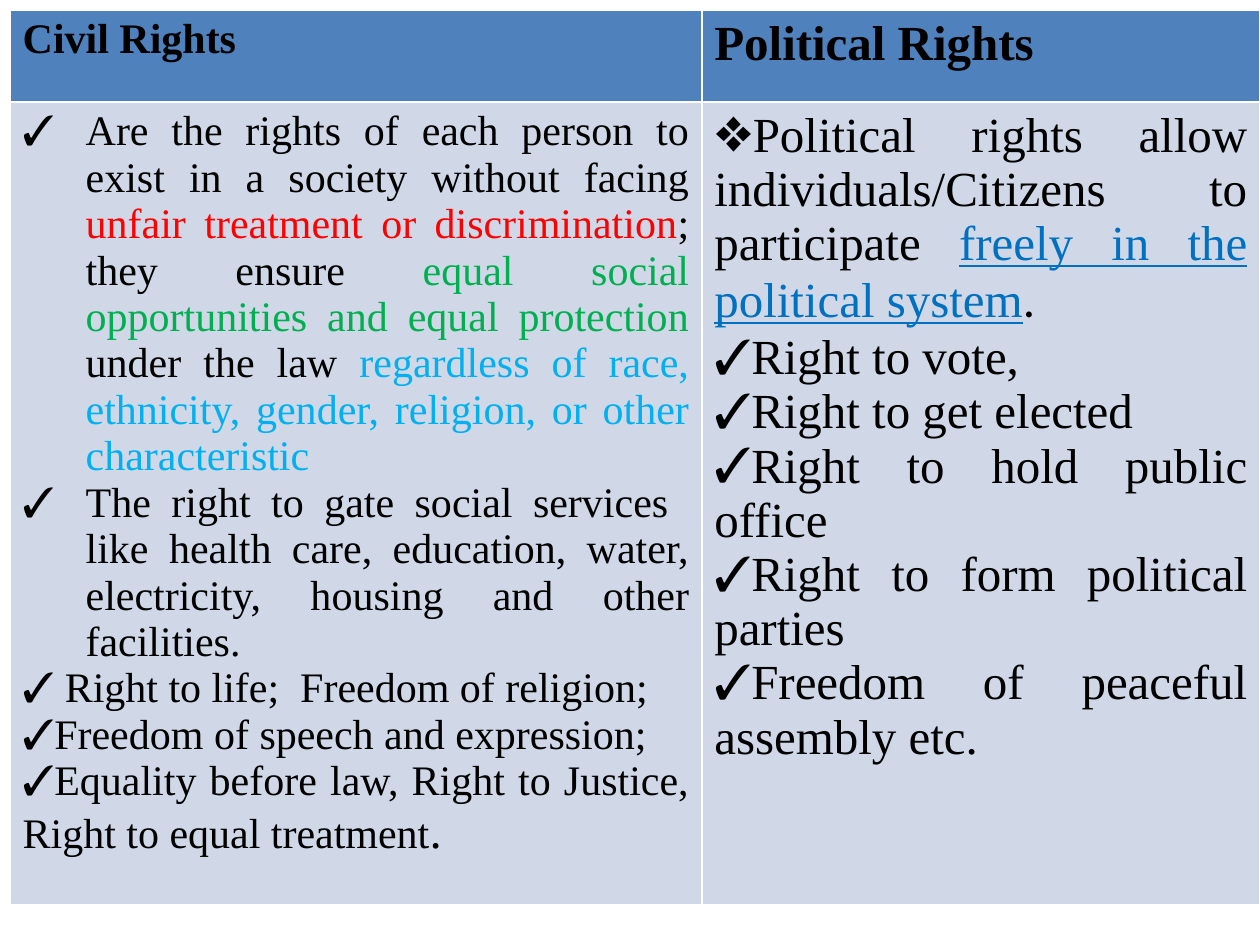
from lxml.etree import SubElement
from pptx import Presentation
from pptx.dml.color import RGBColor
from pptx.enum.text import PP_ALIGN
from pptx.oxml.ns import qn
from pptx.util import Inches, Pt

BLACK = RGBColor(0x00, 0x00, 0x00)
RED = RGBColor(0xFF, 0x00, 0x00)
GREEN = RGBColor(0x00, 0xB0, 0x50)
SKY = RGBColor(0x00, 0xB0, 0xF0)
BLUE = RGBColor(0x00, 0x70, 0xC0)
HEAD = RGBColor(0x4F, 0x81, 0xBD)
BODY = RGBColor(0xD0, 0xD8, 0xE8)

SERIF = "Times New Roman"
CHECK = "✓"
DIAMOND = "❖"

CIVIL = [
    (CHECK, 0.5, [
        ("Are the rights of each person to exist in a society without facing ", {}),
        ("unfair treatment or discrimination", {"color": RED}),
        ("; they ensure ", {}),
        ("equal social opportunities and equal protection", {"color": GREEN}),
        (" under the law ", {}),
        ("regardless of race, ethnicity, gender, religion, or other characteristic",
         {"color": SKY}),
    ]),
    (CHECK, 0.5, [("The right to gate social services  like health care, education, "
                   "water, electricity, housing and other facilities.", {})]),
    (CHECK, 0, [(" Right to life;  Freedom of religion;", {})]),
    (CHECK, 0, [("Freedom of speech and expression;", {})]),
    (CHECK, 0, [
        ("Equality before law, Right to Justice, Right to equal treatment", {}),
        (".", {"size": 28}),
    ]),
]

CLAIMS = [
    "Right to vote,",
    "Right to get elected",
    "Right to hold public office",
    "Right to form political parties",
    "Freedom of peaceful assembly etc.",
]

POLITICAL = [
    (DIAMOND, 0, [
        ("Political rights allow individuals/Citizens  to participate ", {}),
        ("freely in the political system", {"color": BLUE, "line": True}),
        (".", {"face": "Calibri"}),
    ]),
] + [(CHECK, 0, [(claim, {})]) for claim in CLAIMS]


def style(run, size, color=BLACK, face=SERIF, bold=False, line=False):
    font = run.font
    font.size = Pt(size)
    font.name = face
    font.bold = bold
    font.underline = line
    font.color.rgb = color


def paint(cell, color):
    cell.fill.solid()
    cell.fill.fore_color.rgb = color


def add_mark(para, mark, indent):
    props = para._p.get_or_add_pPr()
    props.set("marL", str(Inches(indent)))
    props.set("indent", str(-Inches(indent)))
    SubElement(props, qn("a:buFont"), typeface=SERIF)
    SubElement(props, qn("a:buChar"), char=mark)


def fill_head(cell, text, size):
    paint(cell, HEAD)
    cell.text_frame.text = text
    style(cell.text_frame.paragraphs[0].runs[0], size, bold=True)


def fill_body(cell, items, size):
    paint(cell, BODY)
    frame = cell.text_frame
    for num, (mark, indent, parts) in enumerate(items):
        para = frame.add_paragraph() if num else frame.paragraphs[0]
        para.alignment = PP_ALIGN.JUSTIFY
        add_mark(para, mark, indent)
        for text, look in parts:
            run = para.add_run()
            run.text = text
            style(run, **{"size": size, **look})


def add_grid(slide, widths, heights):
    grid = slide.shapes.add_table(
        len(heights), len(widths), Inches(0.08), Inches(0.08),
        Inches(sum(widths)), Inches(sum(heights))).table
    for col, width in zip(grid.columns, widths):
        col.width = Inches(width)
    for row, height in zip(grid.rows, heights):
        row.height = Inches(height)
    return grid


def main():
    deck = Presentation()
    deck.slide_width = Inches(10)
    deck.slide_height = Inches(7.5)
    slide = deck.slides.add_slide(deck.slide_layouts[6])
    grid = add_grid(slide, [5.49, 4.43], [0.73, 6.37])
    sides = [("Civil Rights", CIVIL, 24), ("Political Rights", POLITICAL, 28)]
    for col, (title, items, size) in enumerate(sides):
        fill_head(grid.cell(0, col), title, size)
        fill_body(grid.cell(1, col), items, size)
    deck.save("out.pptx")


if __name__ == "__main__":
    main()
